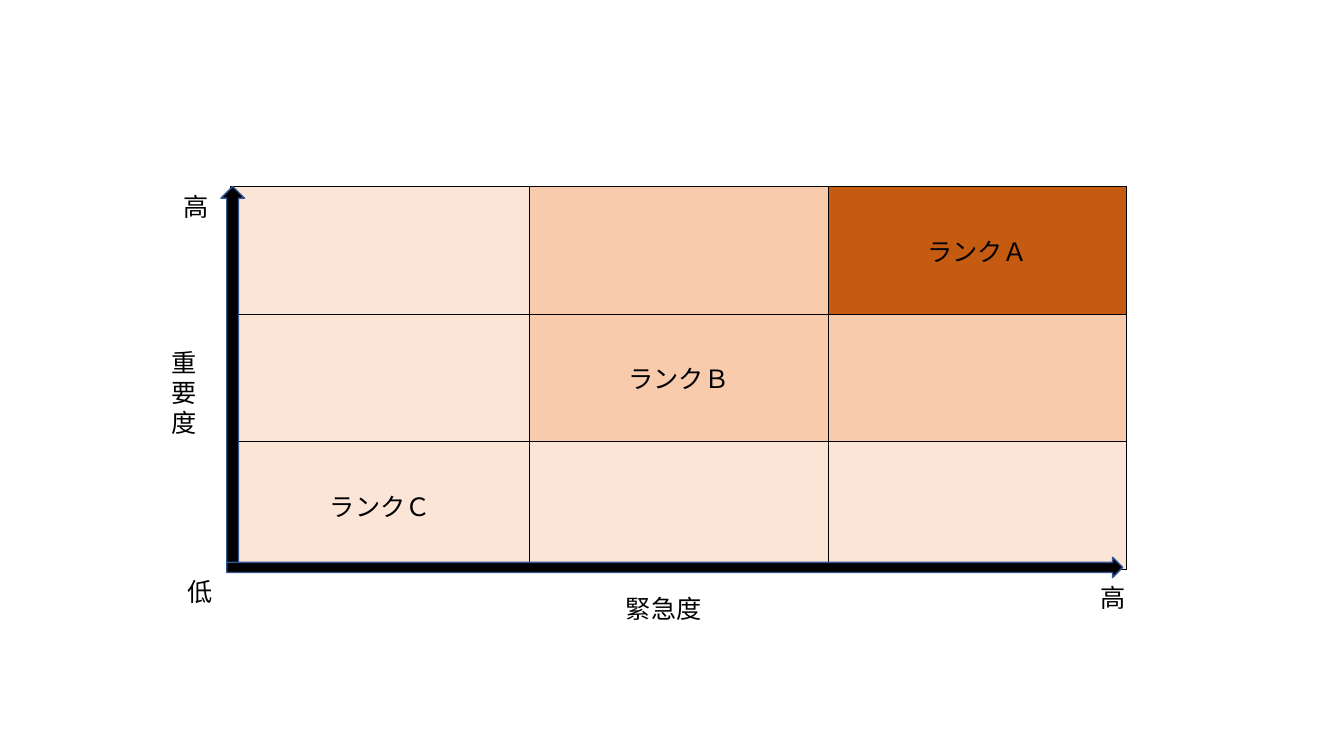
from pptx import Presentation
from pptx.dml.color import RGBColor
from pptx.enum import shapes, text
from pptx.oxml import ns, xmlchemy as xc
from pptx.util import Pt

BLACK = RGBColor(0x00, 0x00, 0x00)
ARROW_LINE = RGBColor(0x32, 0x54, 0x91)
LEVELS = [RGBColor(0xFB, 0xE5, 0xD6), RGBColor(0xF8, 0xCB, 0xAD),
          RGBColor(0xC5, 0x5A, 0x11)]
RANKS = ["ランクＣ", "ランクＢ", "ランクＡ"]
FONT = "Noto Sans CJK JP"
FORMAT = {"name": FONT, "size": Pt(18), "bold": False}
N = 3


def write(tf, words, align=text.PP_ALIGN.LEFT):
    p = tf.paragraphs[0]
    p.alignment = align
    r = p.add_run()
    r.text = words
    for name, value in FORMAT.items():
        setattr(r.font, name, value)
    r.font.color.rgb = BLACK
    # East Asian typeface
    ea = xc.OxmlElement("a:ea")
    ea.set("typeface", FONT)
    r.font._element.find(ns.qn("a:latin")).addnext(ea)


def border(cell):
    tcPr = cell._tc.get_or_add_tcPr()
    for i, side in enumerate(("lnL", "lnR", "lnT", "lnB")):
        ln = xc.OxmlElement(f"a:{side}")
        ln.set("w", str(Pt(1)))
        fill = xc.OxmlElement("a:solidFill")
        clr = xc.OxmlElement("a:srgbClr")
        clr.set("val", str(BLACK))
        fill.append(clr)
        ln.append(fill)
        tcPr.insert(i, ln)


def add_matrix(s, x, y, w, h):
    table = s.shapes.add_table(N, N, Pt(x), Pt(y), Pt(w), Pt(h)).table
    for row in range(N):
        table.rows[row].height = Pt(h / N)
        table.columns[row].width = Pt(w / N)
        for col in range(N):
            cell = table.cell(row, col)
            # Rank is limited by the lower of urgency and importance
            importance = N - 1 - row
            level = min(col, importance)
            cell.fill.solid()
            cell.fill.fore_color.rgb = LEVELS[level]
            cell.vertical_anchor = text.MSO_ANCHOR.MIDDLE
            border(cell)
            if col == importance:
                write(cell.text_frame, RANKS[level], text.PP_ALIGN.CENTER)


def add_arrow(s, kind, x, y, w, h):
    sp = s.shapes.add_shape(kind, Pt(x), Pt(y), Pt(w), Pt(h))
    sp.shadow.inherit = False
    sp.fill.solid()
    sp.fill.fore_color.rgb = BLACK
    sp.line.color.rgb = ARROW_LINE
    sp.line.width = Pt(1)


def add_label(s, words, x, y, w, h=29):
    tf = s.shapes.add_textbox(Pt(x), Pt(y), Pt(w), Pt(h)).text_frame
    tf.word_wrap = True
    tf.auto_size = text.MSO_AUTO_SIZE.SHAPE_TO_FIT_TEXT
    write(tf, words)


def add_axes(s, x, y, w, h):
    bottom = y + h
    # Importance runs up, urgency runs right
    add_arrow(s, shapes.MSO_SHAPE.UP_ARROW, x - 7.2, y, 16.8, h)
    add_arrow(s, shapes.MSO_SHAPE.RIGHT_ARROW, x - 3, bottom - 8.7, w, 14.5)
    # Ends of the axes
    add_label(s, "高", x - 41, y, 38)
    add_label(s, "高", x + w - 26, bottom + 5.8, 38)
    add_label(s, "低", x - 38.2, bottom + 1.2, 38)
    # Axis titles
    add_label(s, "重要度", x - 49.7, y + 111, 39.6, 72.7)
    add_label(s, "緊急度", x + 275, bottom + 13.7, 116.6)


def main():
    prs = Presentation()
    prs.slide_width, prs.slide_height = Pt(960), Pt(540)
    s = prs.slides.add_slide(prs.slide_layouts[6])
    box = (165, 133.2, 640, 273.6)
    add_matrix(s, *box)
    add_axes(s, *box)
    prs.save("out.pptx")


if __name__ == "__main__":
    main()
